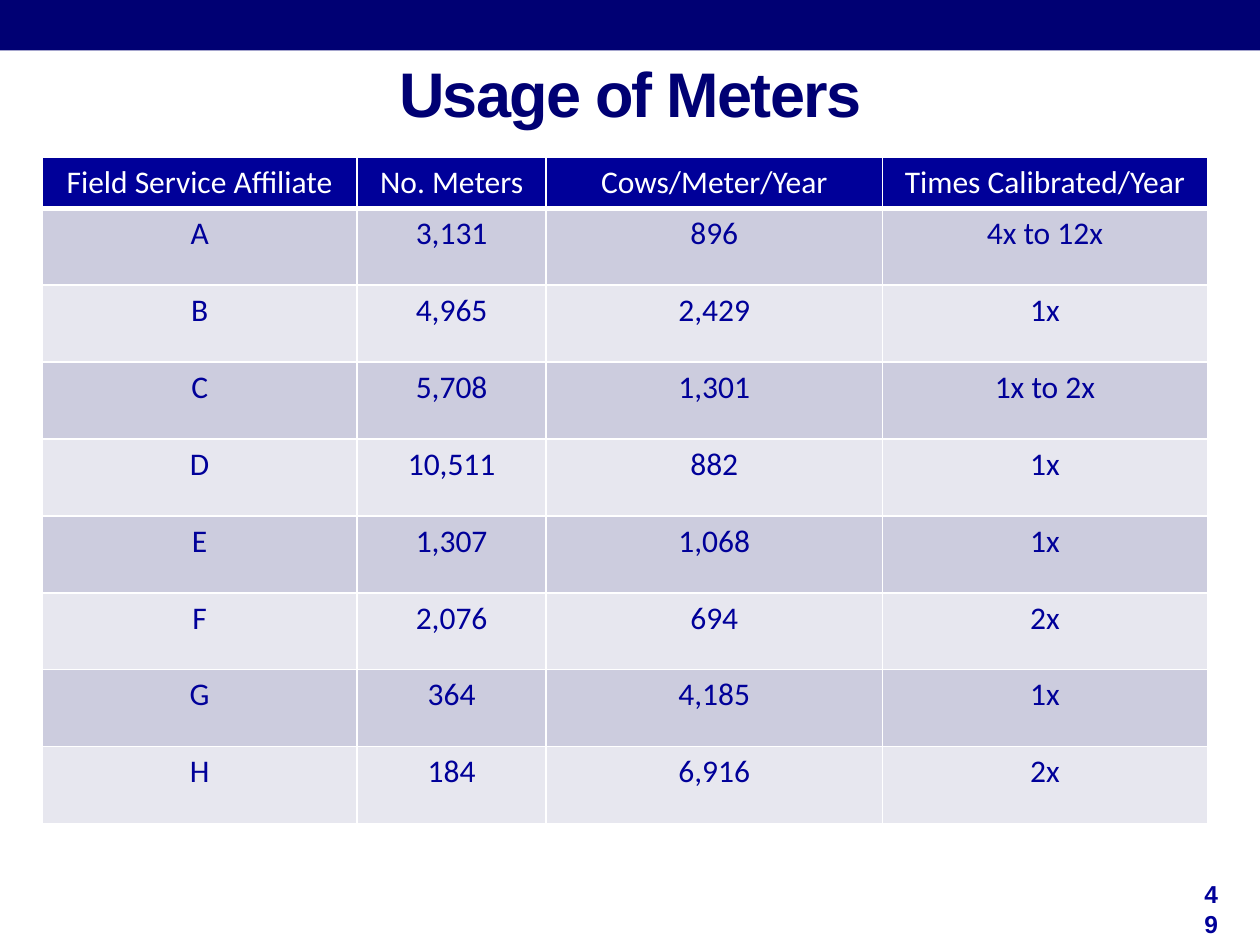
"""Build the "Usage of Meters" slide with its affiliate table."""
from typing import NamedTuple, Optional

from pptx import Presentation
from pptx import util as u
from pptx.dml.color import RGBColor
from pptx.enum import shapes, text
from pptx.oxml.xmlchemy import OxmlElement

COLORS = {
    "navy": "000073",
    "blue": "000099",
    "white": "FFFFFF",
    "band_dark": "CCCCDE",
    "band_light": "E7E7EF",
}
COL_WIDTHS = (6.35, 3.81, 6.78, 6.55)
HEADER_HEIGHT, ROW_HEIGHT = 1.03, 1.55


class Style(NamedTuple):
    font: str
    size: int
    color: str
    bold: bool = False
    spacing: Optional[int] = None


class Label(NamedTuple):
    content: str
    left: float
    top: float
    width: float
    height: float
    align: text.PP_ALIGN
    style: Style


class Usage(NamedTuple):
    affiliate: str
    meters: str
    cows: str
    calibrated: str


HEADER_STYLE = Style("Calibri", 18, "white")
BODY_STYLE = Style("Calibri", 18, "blue")
LABELS = (
    Label("Usage of Meters", 0.64, 0.76, 24.13, 2.21, text.PP_ALIGN.CENTER,
          Style("Arial", 36, "navy", True, -100)),
    Label("49", 24.03, 17.81, 1.02, 1.02, text.PP_ALIGN.LEFT,
          Style("Arial", 14, "blue", True)),
)
HEADER = Usage("Field Service Affiliate", "No. Meters", "Cows/Meter/Year",
               "Times Calibrated/Year")
ROWS = (
    Usage("A", "3,131", "896", "4x to 12x"),
    Usage("B", "4,965", "2,429", "1x"),
    Usage("C", "5,708", "1,301", "1x to 2x"),
    Usage("D", "10,511", "882", "1x"),
    Usage("E", "1,307", "1,068", "1x"),
    Usage("F", "2,076", "694", "2x"),
    Usage("G", "364", "4,185", "1x"),
    Usage("H", "184", "6,916", "2x"),
)


def rgb(name: str) -> RGBColor:
    """Return the named colour."""
    return RGBColor.from_string(COLORS[name])


def add_run(p, content: str, style: Style) -> None:
    """Append a styled run to a paragraph."""
    r = p.add_run()
    r.text = content
    r.font.name = style.font
    r.font.size = u.Pt(style.size)
    r.font.bold = style.bold
    r.font.color.rgb = rgb(style.color)
    if style.spacing is not None:
        r._r.get_or_add_rPr().set("spc", str(style.spacing))


def add_label(s, label: Label) -> None:
    """Add a wrapped, vertically centred text box."""
    sp = s.shapes.add_textbox(u.Cm(label.left), u.Cm(label.top),
                              u.Cm(label.width), u.Cm(label.height))
    tf = sp.text_frame
    tf.word_wrap = True
    tf.vertical_anchor = text.MSO_ANCHOR.MIDDLE
    p = tf.paragraphs[0]
    p.alignment = label.align
    add_run(p, label.content, label.style)


def add_borders(cell, bottom: int) -> None:
    """Draw white borders around a cell, with its own bottom width."""
    tc_pr = cell._tc.get_or_add_tcPr()
    for side, width in (("L", 1), ("R", 1), ("T", 1), ("B", bottom)):
        ln = OxmlElement(f"a:ln{side}")
        ln.set("w", str(u.Pt(width)))
        fill = OxmlElement("a:solidFill")
        color = OxmlElement("a:srgbClr")
        color.set("val", COLORS["white"])
        fill.append(color)
        ln.append(fill)
        tc_pr.append(ln)


def fill_row(table, index: int, usage: Usage, fill: str, style: Style,
             bottom: int = 1) -> None:
    """Write and format one table row."""
    for cell, content in zip(table.rows[index].cells, usage):
        add_borders(cell, bottom)
        cell.fill.solid()
        cell.fill.fore_color.rgb = rgb(fill)
        p = cell.text_frame.paragraphs[0]
        p.alignment = text.PP_ALIGN.CENTER
        add_run(p, content, style)


def add_usage_table(s) -> None:
    """Add the table of meter usage by affiliate."""
    height = HEADER_HEIGHT + ROW_HEIGHT * len(ROWS)
    table = s.shapes.add_table(len(ROWS) + 1, len(COL_WIDTHS), u.Cm(0.85), u.Cm(3.17),
                               u.Cm(sum(COL_WIDTHS)), u.Cm(height)).table
    table.horz_banding = False
    for column, width in zip(table.columns, COL_WIDTHS):
        column.width = u.Cm(width)
    for row in table.rows:
        row.height = u.Cm(ROW_HEIGHT)
    table.rows[0].height = u.Cm(HEADER_HEIGHT)
    fill_row(table, 0, HEADER, "blue", HEADER_STYLE, bottom=3)
    for i, usage in enumerate(ROWS, start=1):
        fill_row(table, i, usage, "band_dark" if i % 2 else "band_light", BODY_STYLE)


def add_banner(s, width: int) -> None:
    """Add the navy band across the top."""
    sp = s.shapes.add_shape(shapes.MSO_SHAPE.RECTANGLE, 0, 0, width, u.Cm(1.02))
    sp.shadow.inherit = False
    sp.fill.solid()
    sp.fill.fore_color.rgb = rgb("navy")
    sp.line.fill.background()


def main() -> None:
    """Build and save the slide."""
    prs = Presentation()
    prs.slide_width, prs.slide_height = u.Cm(25.4), u.Cm(19.05)
    s = prs.slides.add_slide(prs.slide_layouts[6])
    add_banner(s, prs.slide_width)
    title, page_number = LABELS
    add_label(s, title)
    add_usage_table(s)
    add_label(s, page_number)
    prs.save("out.pptx")


if __name__ == "__main__":
    main()
